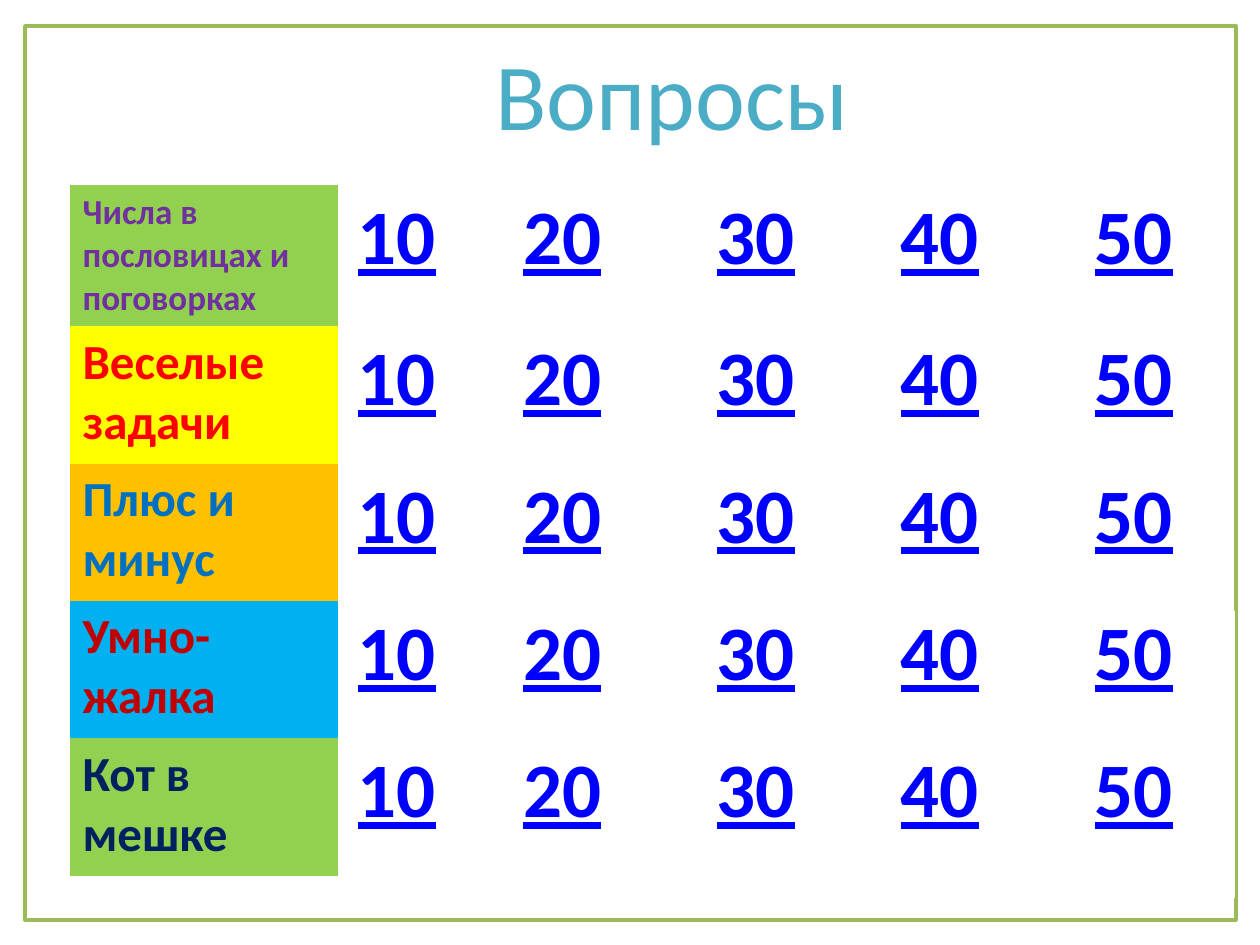
from pptx import Presentation
from pptx.dml.color import RGBColor
from pptx.enum.shapes import MSO_SHAPE
from pptx.enum.text import MSO_ANCHOR, PP_ALIGN
from pptx.util import Emu, Pt

SCALE = 914400 / 126
PLAIN = "{2D5ABB26-0587-4C30-8999-92F81FD0307C}"
COLS = [268, 118, 213, 174, 194, 194]
TOPICS = [
    (["Числа в пословицах и поговорках"], 20, "7030A0", "92D050"),
    (["Веселые задачи"], 28, "FF0000", "FFFF00"),
    (["Плюс и минус"], 28, "0070C0", "FFC000"),
    (["Умно-", "жалка"], 28, "C00000", "00B0F0"),
    (["Кот в мешке"], 28, "002060", "92D050"),
]


def px(num):
    """Turn pixels into EMU."""
    return Emu(round(num * SCALE))


def paint(code):
    """Turn a hex string into a colour."""
    return RGBColor.from_string(code)


def write(frame, lines, size, color, bold=True, under=False, align=None):
    """Write one paragraph with one run for each line."""
    for i, line in enumerate(lines):
        para = frame.add_paragraph() if i else frame.paragraphs[0]
        para.alignment = align
        run = para.add_run()
        run.text = line
        font = run.font
        font.name, font.size = "Calibri", Pt(size)
        font.bold, font.underline = bold, under
        font.color.rgb = paint(color)


def panel(slide, box, edge=None):
    """Draw a white panel, with an edge if a colour is given."""
    shape = slide.shapes.add_shape(MSO_SHAPE.RECTANGLE, *map(px, box))
    shape.shadow.inherit = False
    shape.fill.solid()
    shape.fill.fore_color.rgb = paint("FFFFFF")
    if edge:
        shape.line.color.rgb = paint(edge)
        shape.line.width = Pt(2)
    else:
        shape.line.fill.background()


def head(slide, box):
    """Place the title."""
    title = slide.shapes.title
    title.left, title.top, title.width, title.height = map(px, box)
    frame = title.text_frame
    frame.word_wrap = False
    frame.vertical_anchor = MSO_ANCHOR.TOP
    write(frame, ["Вопросы"], 54, "4BACC6", False, align=PP_ALIGN.CENTER)
    slide.shapes._spTree.append(title._element)


def board(slide, box):
    """Build the table of topics and points."""
    frame = slide.shapes.add_table(len(TOPICS), len(COLS), *map(px, box))
    frame._element.graphic.graphicData.tbl.tblPr[0].text = PLAIN
    table = frame.table
    table.first_row = table.horz_banding = False
    for col, width in zip(table.columns, COLS):
        col.width = px(width)
    for row, (lines, size, color, back) in zip(table.rows, TOPICS):
        row.height = px(box[3] / len(TOPICS))
        topic, *points = row.cells
        topic.fill.solid()
        topic.fill.fore_color.rgb = paint(back)
        write(topic.text_frame, lines, size, color)
        for i, cell in enumerate(points, 1):
            cell.fill.background()
            write(cell.text_frame, [str(i * 10)], 44, "0000FF",
                  under=True, align=PP_ALIGN.CENTER)


def main():
    """Build and save the slide."""
    deck = Presentation()
    deck.slide_width, deck.slide_height = px(1260), px(945)
    slide = deck.slides.add_slide(deck.slide_layouts[5])
    panel(slide, (25, 26, 1211, 894), "9BBB59")
    panel(slide, (1017, 611, 218, 287))
    board(slide, (70, 185, sum(COLS), 687))
    head(slide, (481, 30, 382, 127))
    deck.save("out.pptx")


if __name__ == "__main__":
    main()
